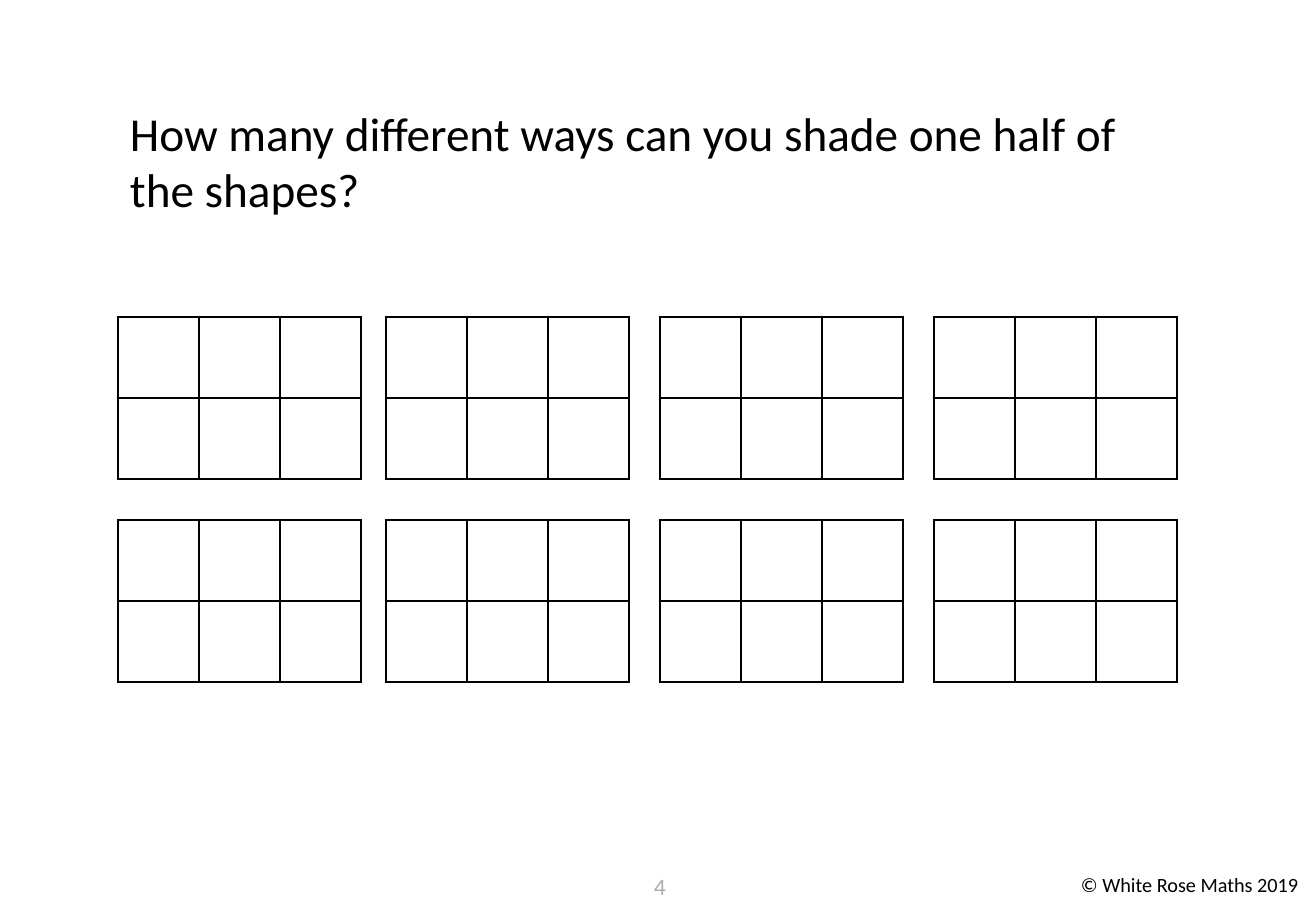
from dataclasses import dataclass
from itertools import product

from lxml import etree
from pptx import Presentation
from pptx.dml.color import RGBColor
from pptx.enum.text import PP_ALIGN
from pptx.oxml.ns import qn
from pptx.util import Pt

LEFT, CENTER = PP_ALIGN.LEFT, PP_ALIGN.CENTER
SCALE = 914400 / 121.5
WIDTH, HEIGHT = 1316, 911
CELL, ROWS, COLS = 81, 2, 3
GRID_LEFTS = (118, 386, 660, 934)
GRID_TOPS = (317, 520)


@dataclass(frozen=True)
class Theme:
    """Colours, font and type sizes of the slide."""
    font: str = "Calibri"
    ink: str = "000000"
    paper: str = "FFFFFF"
    faint: str = "AFABAB"
    title: int = 28
    page: int = 14
    note: int = 12
    line: float = 1.5


THEME = Theme()


def px(n):
    """Turn pixels into EMU."""
    return round(n * SCALE)


def add_text(slide, box, text, size, color, align=LEFT):
    """Place one wrapped text box."""
    frame = slide.shapes.add_textbox(*map(px, box)).text_frame
    frame.word_wrap = True
    frame.text = text
    para = frame.paragraphs[0]
    para.alignment = align
    font = para.runs[0].font
    font.name = THEME.font
    font.size = Pt(size)
    font.color.rgb = RGBColor.from_string(color)


def style_cell(cell):
    """Give a cell four ruled sides and a plain fill."""
    props = cell._tc.get_or_add_tcPr()
    for side in ("lnL", "lnR", "lnT", "lnB"):
        line = etree.SubElement(props, qn(f"a:{side}"), w=str(Pt(THEME.line)))
        fill = etree.SubElement(line, qn("a:solidFill"))
        etree.SubElement(fill, qn("a:srgbClr"), val=THEME.ink)
    cell.fill.solid()
    cell.fill.fore_color.rgb = RGBColor.from_string(THEME.paper)


def add_grid(slide, box):
    """Draw one blank grid of equal cells in the box."""
    left, top, width, height = map(px, box)
    table = slide.shapes.add_table(ROWS, COLS, left, top, width, height).table
    for col in table.columns:
        col.width = width // COLS
    for row in table.rows:
        row.height = height // ROWS
    for cell in table.iter_cells():
        style_cell(cell)


def add_footer(slide, box):
    """Place the page number and the rights line."""
    left, top, width, height = box
    add_text(slide, (left + 629, top, 62, height), "4",
             THEME.page, THEME.faint, CENTER)
    add_text(slide, (left + width - 247, top, 247, height),
             "© White Rose Maths 2019", THEME.note, THEME.ink)


def main():
    """Build and save the slide."""
    deck = Presentation()
    deck.slide_width, deck.slide_height = px(WIDTH), px(HEIGHT)
    slide = deck.slides.add_slide(deck.slide_layouts[6])
    add_footer(slide, (0, 866, WIDTH, 45))
    add_text(slide, (118, 98, 1070, 126),
             "How many different ways can you shade one half of the shapes?",
             THEME.title, THEME.ink)
    for top, left in product(GRID_TOPS, GRID_LEFTS):
        add_grid(slide, (left, top, COLS * CELL, ROWS * CELL))
    deck.save("out.pptx")


if __name__ == "__main__":
    main()
